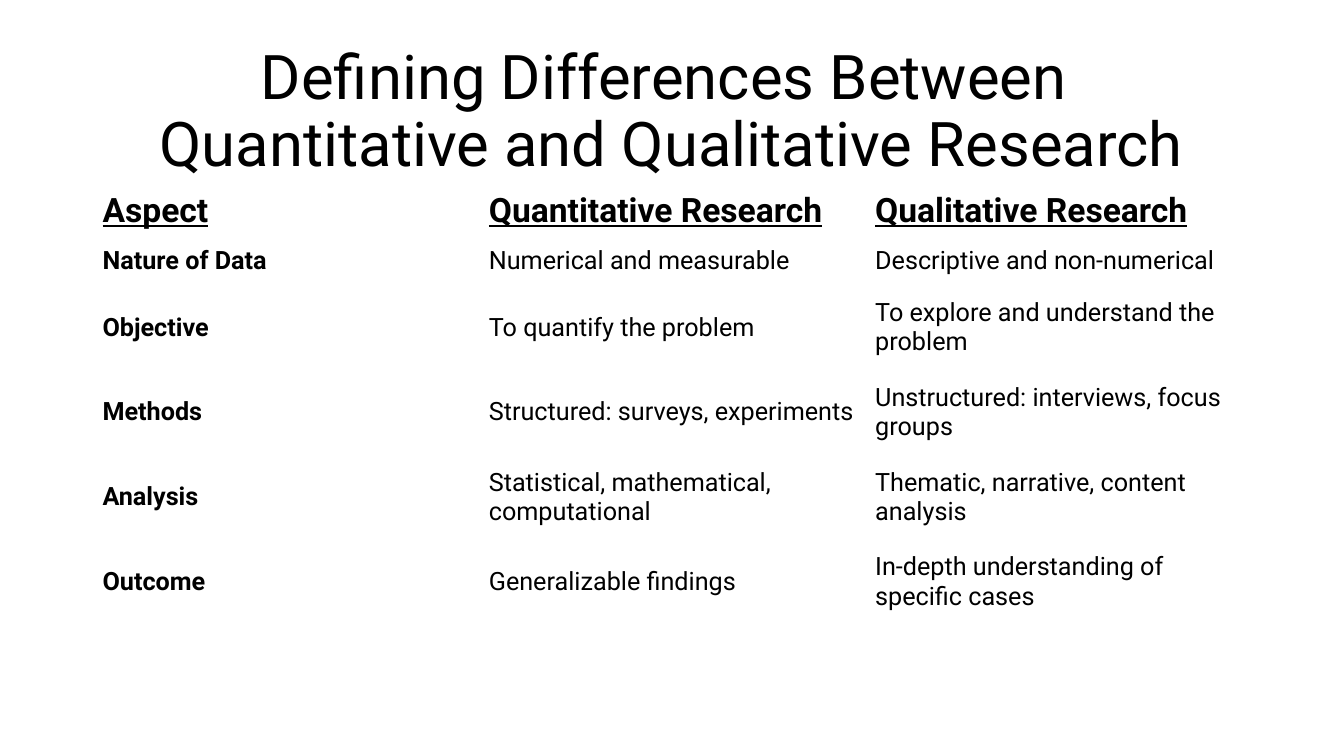
from pptx import Presentation
from pptx.dml.color import RGBColor
from pptx.enum.text import MSO_ANCHOR, PP_ALIGN
from pptx.util import Cm, Pt

MID = MSO_ANCHOR.MIDDLE
CENTER = PP_ALIGN.CENTER

# Content
TITLE = ["Defining Differences Between ", "Quantitative and Qualitative Research"]
ROWS = [
    ("Aspect", "Quantitative Research", "Qualitative Research"),
    ("Nature of Data", "Numerical and measurable", "Descriptive and non-numerical"),
    ("Objective", "To quantify the problem", "To explore and understand the problem"),
    ("Methods", "Structured: surveys, experiments", "Unstructured: interviews, focus groups"),
    ("Analysis", "Statistical, mathematical, computational", "Thematic, narrative, content analysis"),
    ("Outcome", "Generalizable findings", "In-depth understanding of specific cases"),
]

# Layout in cm
FONT, INK = "Roboto", "000000"
LEFT, WIDTH = 2.33, 29.21
TITLE_TOP, TITLE_H = 1.01, 3.68
TABLE_TOP = TITLE_TOP + TITLE_H
LOW, TALL = 1.22, 2.14
HEIGHTS = [LOW] * 2 + [TALL] * 4


def paint(color, code):
    color.rgb = RGBColor.from_string(code)


def add_run(para, text, size, bold=False, under=False):
    run = para.add_run()
    run.text = text
    font = run.font
    font.name, font.size = FONT, Pt(size)
    font.bold, font.underline = bold, under
    paint(font.color, INK)


deck = Presentation()
deck.slide_width, deck.slide_height = Cm(33.87), Cm(19.05)
slide = deck.slides.add_slide(deck.slide_layouts[6])

# Title
box = slide.shapes.add_textbox(Cm(LEFT), Cm(TITLE_TOP), Cm(WIDTH), Cm(TITLE_H))
frame = box.text_frame
frame.word_wrap = True
frame.vertical_anchor = MID
para = frame.paragraphs[0]
para.alignment = CENTER
para.line_spacing = 0.9
for i, line in enumerate(TITLE):
    if i:
        para.add_line_break()
    add_run(para, line, 44)

# Comparison table
table = slide.shapes.add_table(
    len(ROWS), len(ROWS[0]), Cm(LEFT), Cm(TABLE_TOP), Cm(WIDTH), Cm(sum(HEIGHTS))
).table
table.first_row = table.horz_banding = False
for r, (texts, height) in enumerate(zip(ROWS, HEIGHTS)):
    table.rows[r].height = Cm(height)
    head = r == 0
    for c, text in enumerate(texts):
        cell = table.cell(r, c)
        cell.fill.background()
        cell.vertical_anchor = MID
        add_run(cell.text_frame.paragraphs[0], text, 24 if head else 18,
                bold=head or c == 0, under=head)

deck.save("out.pptx")
